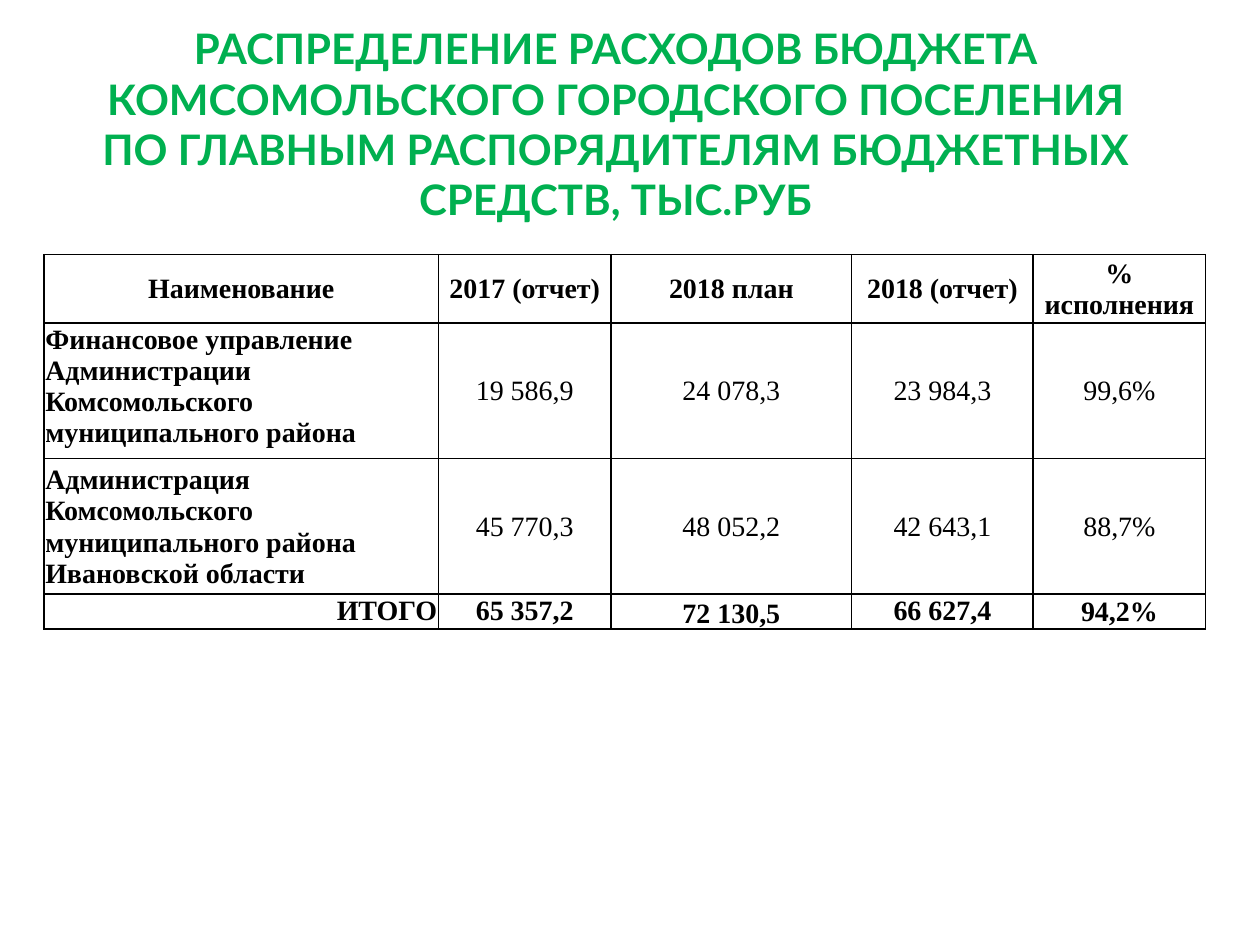
from dataclasses import dataclass

from lxml import etree
from pptx import Presentation
from pptx.dml.color import RGBColor
from pptx.enum.text import MSO_ANCHOR, PP_ALIGN
from pptx.oxml.ns import qn
from pptx.util import Inches, Pt

LEFT, CENTER, RIGHT = PP_ALIGN.LEFT, PP_ALIGN.CENTER, PP_ALIGN.RIGHT
TOP, MIDDLE, BOTTOM = MSO_ANCHOR.TOP, MSO_ANCHOR.MIDDLE, MSO_ANCHOR.BOTTOM


@dataclass(frozen=True)
class Theme:
    title_font: str = "Lato"
    table_font: str = "Times New Roman"
    title_size: int = 24
    table_size: int = 16
    border_width: int = 1
    title_color: str = "00B050"
    ink: str = "000000"
    paper: str = "FFFFFF"


@dataclass(frozen=True)
class BudgetRow:
    height: float
    name: str
    figures: tuple[str, ...]
    name_align: PP_ALIGN = LEFT
    bold_figures: bool = False
    anchors: tuple[MSO_ANCHOR, ...] = (MIDDLE,) * 5


THEME = Theme()
TITLE = (
    "РАСПРЕДЕЛЕНИЕ РАСХОДОВ БЮДЖЕТА КОМСОМОЛЬСКОГО ГОРОДСКОГО ПОСЕЛЕНИЯ\v"
    "ПО ГЛАВНЫМ РАСПОРЯДИТЕЛЯМ БЮДЖЕТНЫХ СРЕДСТВ, ТЫС.РУБ"
)
COLUMN_WIDTHS = (3.13, 1.37, 1.91, 1.44, 1.37)
BUDGET_ROWS = (
    BudgetRow(0.5, "Наименование",
              ("2017 (отчет)", "2018 план", "2018 (отчет)", "% исполнения"),
              name_align=CENTER, bold_figures=True),
    BudgetRow(1, "Финансовое управление Администрации Комсомольского муниципального района",
              ("19 586,9", "24 078,3", "23 984,3", "99,6%"),
              anchors=(TOP,) + (MIDDLE,) * 4),
    BudgetRow(1, "Администрация Комсомольского муниципального района Ивановской области",
              ("45 770,3", "48 052,2", "42 643,1", "88,7%")),
    BudgetRow(0.25, "ИТОГО", ("65 357,2", "72 130,5", "66 627,4", "94,2%"),
              name_align=RIGHT, bold_figures=True,
              anchors=(TOP, TOP, BOTTOM, TOP, MIDDLE)),
)


def style_paragraph(paragraph, font_name: str, size: int, color: str,
                    bold: bool, align: PP_ALIGN) -> None:
    paragraph.alignment = align
    font = paragraph.font
    font.name, font.size, font.bold = font_name, Pt(size), bold
    font.color.rgb = RGBColor.from_string(color)


def add_borders(cell) -> None:
    properties = cell._tc.get_or_add_tcPr()
    for position, side in enumerate(("lnL", "lnR", "lnT", "lnB")):
        line = etree.Element(qn(f"a:{side}"), w=str(Pt(THEME.border_width)))
        fill = etree.SubElement(line, qn("a:solidFill"))
        etree.SubElement(fill, qn("a:srgbClr"), val=THEME.ink)
        properties.insert(position, line)


def fill_cell(cell, text: str, bold: bool, align: PP_ALIGN, anchor: MSO_ANCHOR) -> None:
    cell.text = text
    cell.margin_left = cell.margin_right = cell.margin_top = Inches(0.01)
    cell.margin_bottom = 0
    cell.vertical_anchor = anchor
    cell.fill.solid()
    cell.fill.fore_color.rgb = RGBColor.from_string(THEME.paper)
    add_borders(cell)
    style_paragraph(cell.text_frame.paragraphs[0], THEME.table_font,
                    THEME.table_size, THEME.ink, bold, align)


def add_title(slide) -> None:
    title = slide.shapes.add_textbox(Inches(0.12), Inches(0.44), Inches(9.53), Inches(1.34))
    frame = title.text_frame
    frame.word_wrap = True
    frame.vertical_anchor = BOTTOM
    frame.margin_left = frame.margin_right = Inches(0.05)
    frame.margin_top = frame.margin_bottom = 0
    frame.text = TITLE
    style_paragraph(frame.paragraphs[0], THEME.title_font, THEME.title_size,
                    THEME.title_color, True, CENTER)


def add_budget_table(slide) -> None:
    table = slide.shapes.add_table(
        len(BUDGET_ROWS), len(COLUMN_WIDTHS), Inches(0.35), Inches(2.02),
        Inches(sum(COLUMN_WIDTHS)), Inches(sum(row.height for row in BUDGET_ROWS)),
    ).table
    for column, width in zip(table.columns, COLUMN_WIDTHS):
        column.width = Inches(width)
    for table_row, budget in zip(table.rows, BUDGET_ROWS):
        table_row.height = Inches(budget.height)
        name_cell, *figure_cells = table_row.cells
        name_anchor, *figure_anchors = budget.anchors
        fill_cell(name_cell, budget.name, True, budget.name_align, name_anchor)
        for cell, figure, anchor in zip(figure_cells, budget.figures, figure_anchors):
            fill_cell(cell, figure, budget.bold_figures, CENTER, anchor)


def main() -> None:
    presentation = Presentation()
    presentation.slide_width, presentation.slide_height = Inches(10), Inches(7.5)
    slide = presentation.slides.add_slide(presentation.slide_layouts[6])

    # Heading
    add_title(slide)

    # Spending by budget manager
    add_budget_table(slide)

    presentation.save("out.pptx")


if __name__ == "__main__":
    main()
